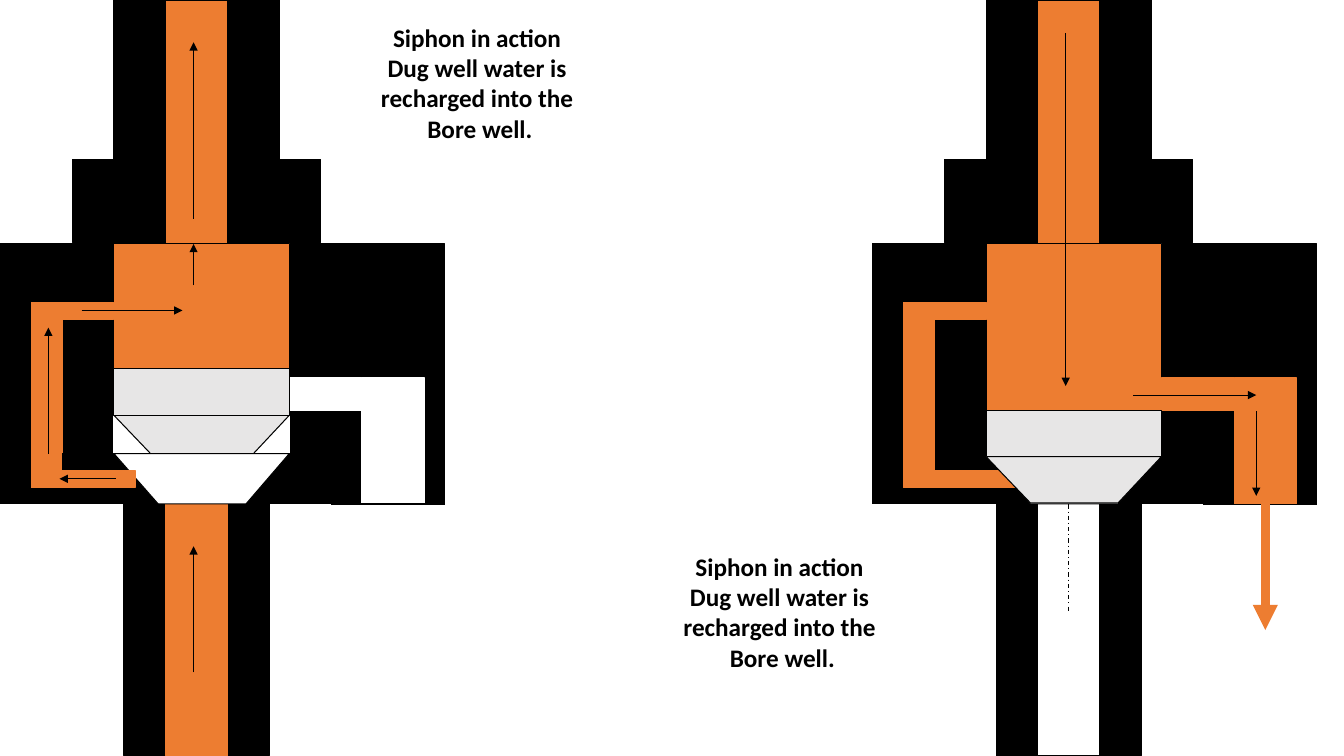
from lxml import etree
from pptx import Presentation
from pptx.dml.color import RGBColor
from pptx.enum.dml import MSO_LINE
from pptx.enum.shapes import MSO_CONNECTOR, MSO_SHAPE
from pptx.enum.text import MSO_AUTO_SIZE, PP_ALIGN
from pptx.oxml.ns import qn
from pptx.util import Emu, Pt

RECTANGLE = MSO_SHAPE.RECTANGLE
STRAIGHT = MSO_CONNECTOR.STRAIGHT
DASH_DOT = MSO_LINE.DASH_DOT
CENTER = PP_ALIGN.CENTER
GROW = MSO_AUTO_SIZE.SHAPE_TO_FIT_TEXT

EMU_PER_PX = 9144
SLIDE_WIDTH, SLIDE_HEIGHT = 1333, 750
RIGHT_SIPHON = 865
COLORS = {"black": "000000", "white": "FFFFFF", "water": "ED7D31", "valve": "E7E6E6"}
CAPTION = [
    "Siphon in action ",
    "Dug well water is ",
    "recharged into the ",
    "Bore well.",
]


def px(length):
    """Convert px to EMU."""
    return Emu(length * EMU_PER_PX)


def rgb(name):
    """Look up a named colour."""
    return RGBColor.from_string(COLORS[name])


def paint(shape, fill, line):
    """Give a shape a flat fill and a thin outline."""
    shape.shadow.inherit = False
    shape.fill.solid()
    shape.fill.fore_color.rgb = rgb(fill)
    shape.line.color.rgb = rgb(line)
    shape.line.width = Pt(0.75)


def add_block(slide, left, top, width, height, fill, line=None):
    """Add a filled rectangle."""
    shape = slide.shapes.add_shape(RECTANGLE, px(left), px(top), px(width), px(height))
    paint(shape, fill, line or fill)


def add_funnel(slide, left, top, height, fill):
    """Add a trapezoid that narrows downwards."""
    bottom = top + height
    builder = slide.shapes.build_freeform(left, top, scale=EMU_PER_PX)
    builder.add_line_segments(
        [(left + 44, bottom), (left + 131, bottom), (left + 174, top)], close=True
    )
    paint(builder.convert_to_shape(), fill, "black")


def add_line(slide, start, end, color="black", width=0.75, dash=None):
    """Add a straight line without a shadow and return it."""
    line = slide.shapes.add_connector(
        STRAIGHT, px(start[0]), px(start[1]), px(end[0]), px(end[1])
    )
    line.line.color.rgb = rgb(color)
    line.line.width = Pt(width)
    if dash:
        line.line.dash_style = dash
    etree.SubElement(line._element.spPr, qn("a:effectLst"))
    return line


def add_arrow(slide, start, end, color="black", width=0.75):
    """Add a line with a triangular head at its end."""
    arrow = add_line(slide, start, end, color, width)
    outline = arrow.line._get_or_add_ln()
    etree.SubElement(outline, qn("a:tailEnd"), type="triangle")


def add_caption(slide, left, top):
    """Add the centred bold caption."""
    box = slide.shapes.add_textbox(px(left), px(top), px(218), px(131))
    frame = box.text_frame
    frame.word_wrap = False
    frame.auto_size = GROW
    for index, text in enumerate(CAPTION):
        paragraph = frame.add_paragraph() if index else frame.paragraphs[0]
        paragraph.alignment = CENTER
        run = paragraph.add_run()
        run.text = text
        run.font.name = "Calibri"
        run.font.size = Pt(18)
        run.font.bold = True
        run.font.color.rgb = rgb("black")


def add_housing(slide, x, bore_fill, bore_line):
    """Add the black casing, the white chamber and the bore pipe."""
    add_block(slide, x, 242, 441, 258, "black")
    add_block(slide, x + 113, 242, 174, 217, "white")
    add_block(slide, x + 123, 500, 144, 250, "black")
    add_block(slide, x + 164, 500, 62, 250, bore_fill, bore_line)
    add_block(slide, x + 72, 158, 246, 83, "black")
    add_block(slide, x + 113, 0, 164, 158, "black")


def add_outlet(slide, x, fill):
    """Add the bent outlet on the right of the casing."""
    add_block(slide, x + 287, 375, 72, 32, fill)
    add_block(slide, x + 359, 375, 62, 125, fill)


def add_rim(slide, x):
    """Add the bottom edge of the outlet."""
    add_line(slide, (x + 328, 500), (x + 441, 500))


def add_water(slide, x):
    """Add the water in the riser, the chamber and the side loop."""
    add_block(slide, x + 164, 0, 62, 242, "water", "black")
    add_block(slide, x + 113, 242, 174, 167, "water", "black")
    add_block(slide, x + 51, 300, 62, 17, "water")
    add_block(slide, x + 31, 300, 31, 183, "water")


def add_valve(slide, x, top):
    """Add the grey valve plug."""
    add_funnel(slide, x + 113, top + 46, 46, "valve")
    add_block(slide, x + 113, top, 174, 46, "valve", "black")


def add_seat(slide, x):
    """Add the valve seat at the bottom of the chamber."""
    add_block(slide, x + 62, 450, 267, 50, "black")
    add_funnel(slide, x + 113, 450, 50, "white")


def add_lifting_siphon(slide):
    """Draw the left siphon with the water rising."""
    add_housing(slide, 0, "water", "water")
    add_outlet(slide, 0, "white")
    add_rim(slide, 0)
    add_water(slide, 0)
    add_valve(slide, 0, 366)
    add_seat(slide, 0)
    add_block(slide, 31, 467, 103, 17, "water")
    for start, end in [
        ((192, 667), (192, 542)),
        ((192, 217), (192, 42)),
        ((48, 450), (48, 325)),
        ((115, 475), (59, 475)),
        ((81, 308), (181, 308)),
        ((192, 283), (192, 242)),
    ]:
        add_arrow(slide, start, end)


def add_draining_siphon(slide):
    """Draw the right siphon with the water leaving by the outlet."""
    x = RIGHT_SIPHON
    add_housing(slide, x, "white", "black")
    add_line(slide, (x + 195, 50), (x + 195, 608), dash=DASH_DOT)
    add_seat(slide, x)
    add_rim(slide, x)
    add_water(slide, x)
    add_outlet(slide, x, "water")
    add_block(slide, x + 31, 467, 113, 17, "water")
    add_valve(slide, x, 407)
    add_arrow(slide, (x + 390, 500), (x + 390, 625), "water", 6)
    for start, end in [
        ((x + 192, 33), (x + 192, 383)),
        ((x + 259, 392), (x + 381, 392)),
        ((x + 381, 408), (x + 381, 492)),
    ]:
        add_arrow(slide, start, end)


def main():
    """Build and save the slide."""
    presentation = Presentation()
    presentation.slide_width = px(SLIDE_WIDTH)
    presentation.slide_height = px(SLIDE_HEIGHT)
    slide = presentation.slides.add_slide(presentation.slide_layouts[6])
    add_lifting_siphon(slide)
    add_caption(slide, 367, 17)
    add_draining_siphon(slide)
    add_caption(slide, 667, 542)
    presentation.save("out.pptx")


if __name__ == "__main__":
    main()
